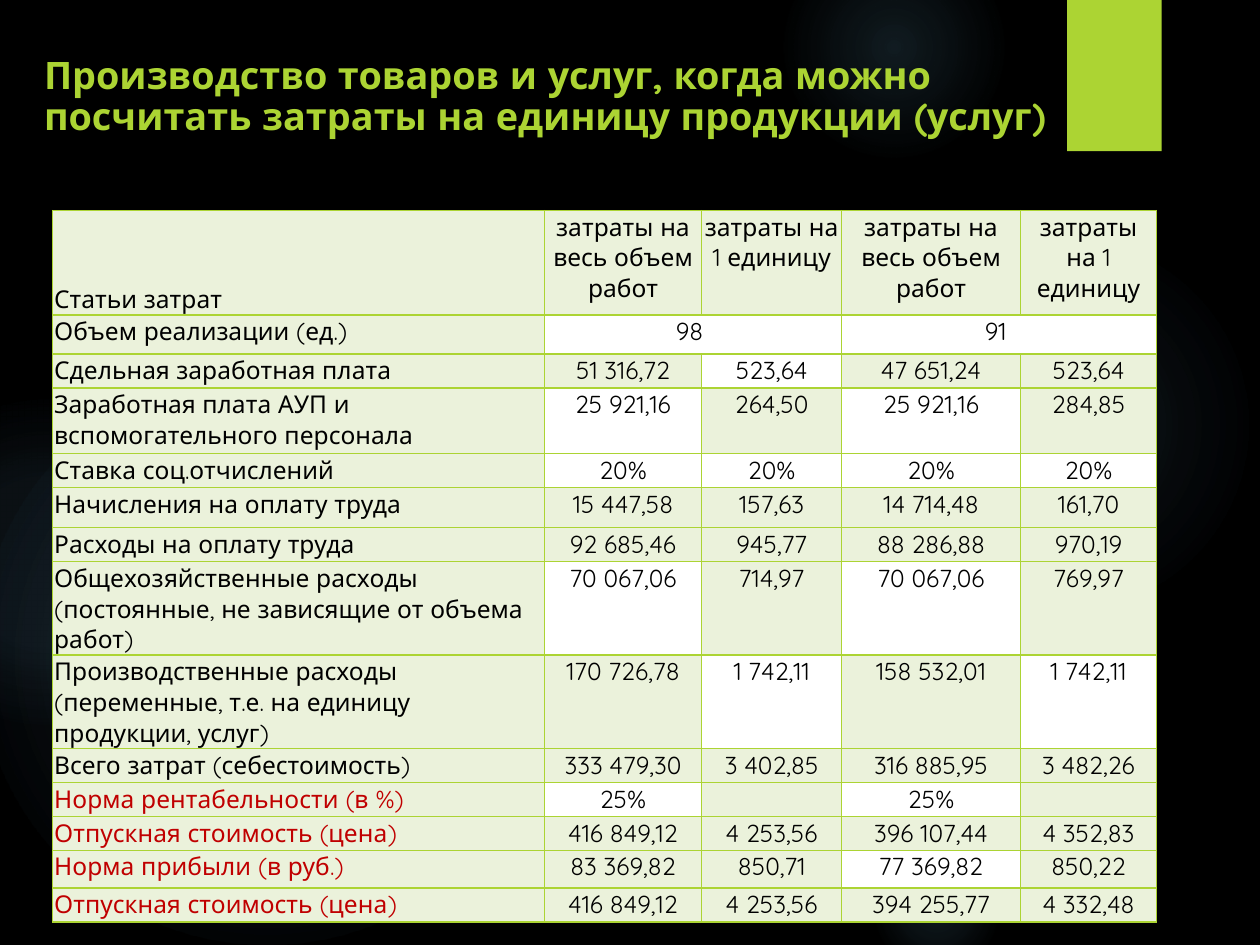
from lxml.etree import SubElement
from pptx import Presentation
from pptx.dml.color import RGBColor
from pptx.enum.shapes import MSO_SHAPE as Shape
from pptx.enum.text import MSO_ANCHOR as Anchor, PP_ALIGN as Align
from pptx.oxml.ns import qn
from pptx.util import Inches, Pt

BLACK = RGBColor(0x00, 0x00, 0x00)
WHITE = RGBColor(0xFF, 0xFF, 0xFF)
LIME = RGBColor(0xAC, 0xD4, 0x33)
PALE_LIME = RGBColor(0xEB, 0xF2, 0xDB)
RED = RGBColor(0xC0, 0x00, 0x00)
GLOW_BLUE = RGBColor(0x7A, 0xC4, 0xF0)
FONT = "Quicksand"

TITLE = "Производство товаров и услуг, когда можно посчитать затраты на единицу продукции (услуг)"
GLOWS = [
    (6.89, 1.83, 3.08, [(0, 7), (36, 6), (69, 0)]),
    (6.22, -0.5, 1.75, [(0, 14), (36, 7), (73, 0)]),
    (6.89, 6.67, 1.08, [(0, 14), (36, 7), (66, 0)]),
    (-0.17, 2.92, 4.58, [(0, 11), (36, 10), (75, 0)]),
    (-0.92, 3.17, 2.58, [(0, 8), (36, 8), (72, 0)]),
]
COLUMN_WIDTHS = [3.9, 1.25, 1.11, 1.42, 1.08]
TOTAL, UNIT = "затраты на весь объем работ", "затраты на 1 единицу"
COST_ROWS = [
    (0.83, ["Статьи затрат", TOTAL, UNIT, TOTAL, UNIT], []),
    (0.31, ["Объем реализации (ед.)", "98 ", "", "91 ", ""], [1, 2, 3, 4]),
    (0.27, ["Сдельная заработная плата", "51 316,72", "523,64", "47 651,24", "523,64"], [2]),
    (0.52, ["Заработная плата АУП и вспомогательного персонала",
            "25 921,16", "264,50", "25 921,16", "284,85"], [1, 3]),
    (0.27, ["Ставка соц.отчислений", "20%", "20%", "20%", "20%"], [1, 2, 3, 4]),
    (0.32, ["Начисления на оплату труда", "15 447,58", "157,63", "14 714,48", "161,70"], []),
    (0.27, ["Расходы на оплату труда", "92 685,46", "945,77", "88 286,88", "970,19"], []),
    (0.52, ["Общехозяйственные расходы (постоянные, не зависящие от объема работ)",
            "70 067,06", "714,97", "70 067,06", "769,97"], [1, 3]),
    (0.52, ["Производственные расходы (переменные, т.е. на единицу продукции, услуг)",
            "170 726,78", "1 742,11", "158 532,01", "1 742,11"], [2, 4]),
    (0.27, ["Всего затрат (себестоимость)", "333 479,30", "3 402,85", "316 885,95", "3 482,26"], []),
    (0.27, ["Норма рентабельности (в %)", "25%", "", "25%", ""], [1, 3]),
    (0.27, ["Отпускная стоимость (цена)", "416 849,12", "4 253,56", "396 107,44", "4 352,83"], []),
    (0.3, ["Норма прибыли (в руб.)", "83 369,82", "850,71", "77 369,82", "850,22"], [3]),
    (0.27, ["Отпускная стоимость (цена)", "416 849,12", "4 253,56", "394 255,77", "4 332,48"], []),
]
MERGED_ROW = 1
FIRST_RED_ROW = 10


def add_node(parent, tag, **attributes):
    return SubElement(parent, qn(tag), {name: str(value) for name, value in attributes.items()})


def add_color(parent, color, opacity=100):
    node = add_node(parent, "a:srgbClr", val=color)
    if opacity < 100:
        add_node(node, "a:alpha", val=opacity * 1000)


def add_glow(page, left, top, size, stops):
    glow = page.shapes.add_shape(Shape.OVAL, Inches(left), Inches(top), Inches(size), Inches(size))
    glow.line.fill.background()
    glow.fill.background()
    properties = glow.element.spPr
    gradient = add_node(properties, "a:gradFill", rotWithShape=1)
    properties.replace(properties.find(qn("a:noFill")), gradient)
    stop_list = add_node(gradient, "a:gsLst")
    for position, opacity in stops:
        add_color(add_node(stop_list, "a:gs", pos=position * 1000), GLOW_BLUE, opacity)
    center = add_node(gradient, "a:path", path="circle")
    add_node(center, "a:fillToRect", l=50000, t=50000, r=50000, b=50000)
    glow.shadow.inherit = False


def add_tab(page):
    tab = page.shapes.add_shape(Shape.RECTANGLE, Inches(8.47), 0, Inches(0.75), Inches(1.2))
    tab.fill.solid()
    tab.fill.fore_color.rgb = LIME
    tab.line.fill.background()
    tab.shadow.inherit = False
    effects = tab.element.spPr.find(qn("a:effectLst"))
    shadow = add_node(effects, "a:outerShdw", blurRad=Pt(3), dist=Pt(2), dir=90 * 60000, rotWithShape=0)
    add_color(shadow, BLACK, 45)


def set_font(para, size, color, bold=False):
    para.font.name = FONT
    para.font.size = Pt(size)
    para.font.bold = bold
    para.font.color.rgb = color


def place_title(page):
    title = page.shapes.title
    title.left, title.top = Inches(0.25), Inches(0.3)
    title.width, title.height = Inches(8.17), Inches(0.95)
    frame = title.text_frame
    frame.text = TITLE
    frame.word_wrap = True
    frame.vertical_anchor = Anchor.MIDDLE
    para = frame.paragraphs[0]
    para.alignment = Align.LEFT
    para.line_spacing = 0.9
    set_font(para, 21.6, LIME, True)
    page.shapes.element.append(title.element)


def add_borders(cell):
    properties = cell._tc.get_or_add_tcPr()
    for position, side in enumerate(["a:lnL", "a:lnR", "a:lnT", "a:lnB"]):
        line = add_node(properties, side, w=Pt(0.75))
        add_color(add_node(line, "a:solidFill"), LIME)
        properties.insert(position, line)


def format_cell(cell, text, fill, color, alignment):
    cell.text = text
    cell.margin_left = cell.margin_right = cell.margin_top = Inches(0.01)
    cell.margin_bottom = 0
    cell.fill.solid()
    cell.fill.fore_color.rgb = fill
    para = cell.text_frame.paragraphs[0]
    para.alignment = alignment
    set_font(para, 14, color)
    add_borders(cell)


def add_cost_table(page):
    heights = [height for height, _, _ in COST_ROWS]
    table = page.shapes.add_table(
        len(COST_ROWS), len(COLUMN_WIDTHS), Inches(0.42), Inches(1.67),
        Inches(sum(COLUMN_WIDTHS)), Inches(sum(heights))).table
    for column, width in zip(table.columns, COLUMN_WIDTHS):
        column.width = Inches(width)
    for row_index, (height, texts, white_columns) in enumerate(COST_ROWS):
        table.rows[row_index].height = Inches(height)
        for column_index, text in enumerate(texts):
            is_label = column_index == 0
            format_cell(
                table.cell(row_index, column_index), text,
                WHITE if column_index in white_columns else PALE_LIME,
                RED if is_label and row_index >= FIRST_RED_ROW else BLACK,
                Align.LEFT if is_label else Align.CENTER)
    table.cell(0, 0).vertical_anchor = Anchor.BOTTOM
    for column_index in (1, 3):
        table.cell(MERGED_ROW, column_index).merge(table.cell(MERGED_ROW, column_index + 1))


def main():
    deck = Presentation()
    deck.slide_width, deck.slide_height = Inches(10), Inches(7.5)
    page = deck.slides.add_slide(deck.slide_layouts[5])
    page.background.fill.solid()
    page.background.fill.fore_color.rgb = BLACK
    for glow in GLOWS:
        add_glow(page, *glow)
    add_tab(page)
    place_title(page)
    add_cost_table(page)
    deck.save("out.pptx")


if __name__ == "__main__":
    main()
